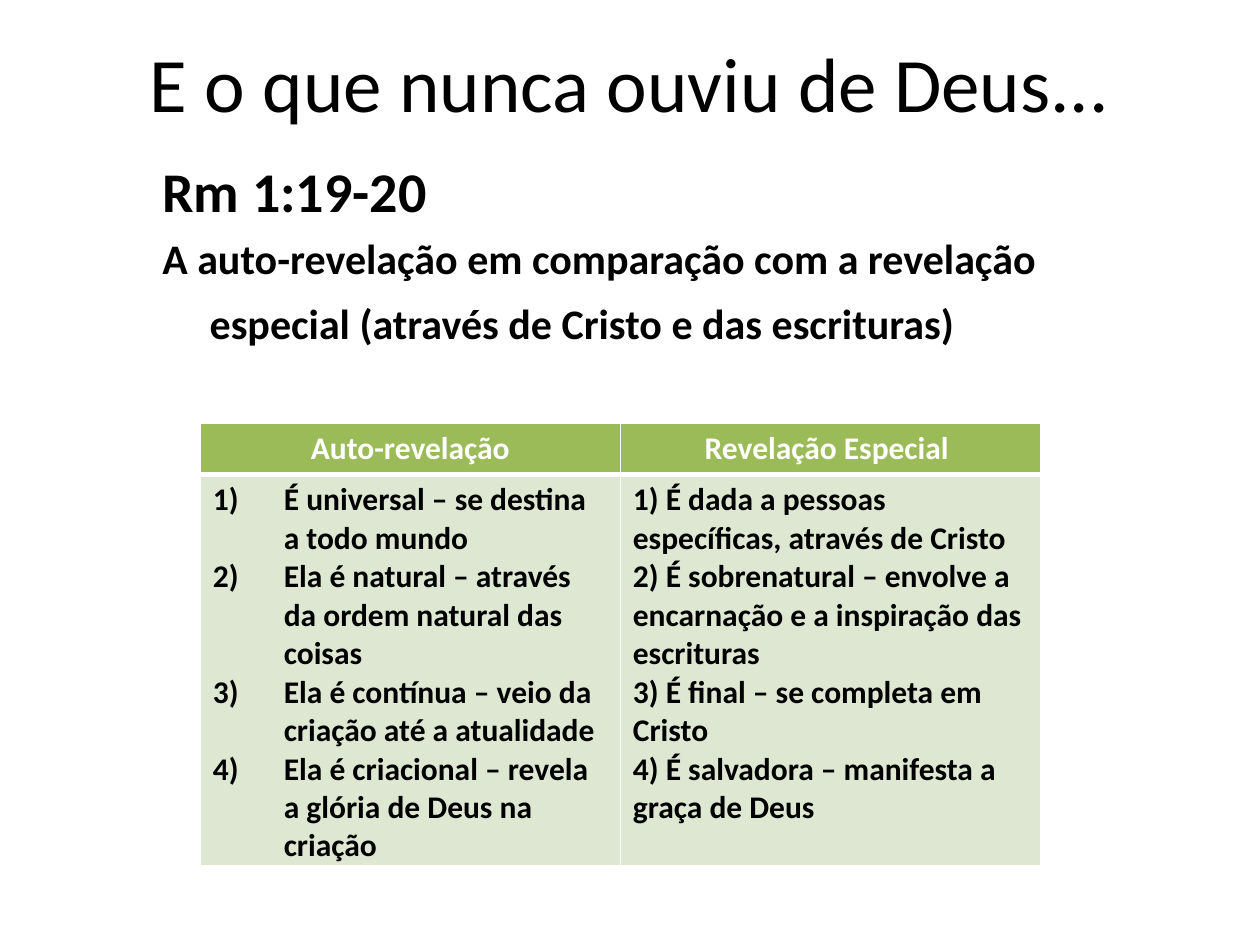
from dataclasses import dataclass

from lxml import etree
from pptx import Presentation
from pptx.dml.color import RGBColor
from pptx.enum.text import MSO_ANCHOR, PP_ALIGN
from pptx.oxml.ns import qn
from pptx.util import Pt

LEFT, CENTER = PP_ALIGN.LEFT, PP_ALIGN.CENTER
TOP, MIDDLE = MSO_ANCHOR.TOP, MSO_ANCHOR.MIDDLE
FONT = "Calibri"
BLACK, WHITE, GREEN, PALE = "000000", "FFFFFF", "9BBB59", "DEE7D1"
THIN, THICK = 1, 3


@dataclass
class Run:
    text: str
    size: float


@dataclass
class Column:
    head: str
    items: list[str]
    indent: float = 0
    number: str = ""


COLUMNS = [
    Column("Auto-revelação", [
        "É universal – se destina a todo mundo",
        "Ela é natural – através da ordem natural das coisas",
        "Ela é contínua – veio da criação até a atualidade",
        "Ela é criacional – revela a glória de Deus na criação",
    ], indent=40.5, number="arabicParenR"),
    Column("Revelação Especial ", [
        "1) É dada a pessoas específicas, através de Cristo",
        "2) É sobrenatural – envolve a encarnação e a inspiração das escrituras",
        "3) É final – se completa em Cristo",
        "4) É salvadora – manifesta a graça de Deus",
    ]),
]


def paint(color, value: str) -> None:
    color.rgb = RGBColor.from_string(value)


def write(frame, lines: list[list[Run]], color: str = BLACK, bold: bool = True,
          align=LEFT, indent: float = 0, number: str = "", gap: float = 0) -> None:
    for i, line in enumerate(lines):
        para = frame.add_paragraph() if i else frame.paragraphs[0]
        para.alignment = align
        if indent:
            props = para._p.get_or_add_pPr()
            props.set("marL", str(Pt(indent)))
            props.set("indent", str(-Pt(indent)))
        if number:
            etree.SubElement(props, qn("a:buFont"), typeface="+mj-lt")
            etree.SubElement(props, qn("a:buAutoNum"), type=number)
        if i and gap:
            para.space_before = Pt(gap)
        for part in line:
            run = para.add_run()
            run.text = part.text
            font = run.font
            font.name, font.size, font.bold = FONT, Pt(part.size), bold
            paint(font.color, color)


def add_box(slide, left: float, top: float, width: float, height: float,
            anchor=TOP, inset: float = 3.6):
    frame = slide.shapes.add_textbox(
        Pt(left), Pt(top), Pt(width), Pt(height)).text_frame
    frame.word_wrap = True
    frame.vertical_anchor = anchor
    frame.margin_top = Pt(inset)
    return frame


def style(cell, fill: str, top: float, bottom: float) -> None:
    props = cell._tc.get_or_add_tcPr()
    edges = {"L": THIN, "R": THIN, "T": top, "B": bottom}
    for side, width in edges.items():
        line = etree.SubElement(props, qn(f"a:ln{side}"), w=str(Pt(width)))
        solid = etree.SubElement(line, qn("a:solidFill"))
        etree.SubElement(solid, qn("a:srgbClr"), val=WHITE)
    cell.fill.solid()
    paint(cell.fill.fore_color, fill)


def add_grid(slide, columns: list[Column], left: float, top: float,
             width: float, heights: list[float]) -> None:
    grid = slide.shapes.add_table(
        len(heights), len(columns), Pt(left), Pt(top),
        Pt(width * len(columns)), Pt(sum(heights))).table
    for row, height in zip(grid.rows, heights):
        row.height = Pt(height)
    for i, col in enumerate(columns):
        grid.columns[i].width = Pt(width)
        head, body = grid.cell(0, i), grid.cell(1, i)
        style(head, GREEN, THIN, THICK)
        style(body, PALE, THICK, THIN)
        write(head.text_frame, [[Run(col.head, 18)]], color=WHITE, align=CENTER)
        write(body.text_frame, [[Run(item, 18)] for item in col.items],
              indent=col.indent, number=col.number)


def main() -> None:
    deck = Presentation()
    deck.slide_width, deck.slide_height = Pt(720), Pt(540)
    slide = deck.slides.add_slide(deck.slide_layouts[6])
    title = add_box(slide, 36, 8.6, 648, 75.6, anchor=MIDDLE)
    write(title, [[Run("E o que nunca ouviu de Deus...", 44)]],
          bold=False, align=CENTER)
    body = add_box(slide, 85.7, 83.5, 598.3, 356.4, inset=6)
    write(body, [
        [Run("Rm 1:19-20", 32)],
        [Run("A auto-revelação em comparação com a revelação especial "
             "(através de Cristo e das escrituras)", 24), Run(" ", 32)],
    ], indent=27, gap=5)
    add_grid(slide, COLUMNS, 114.5, 242, 240, [29.2, 223.5])
    deck.save("out.pptx")


if __name__ == "__main__":
    main()
